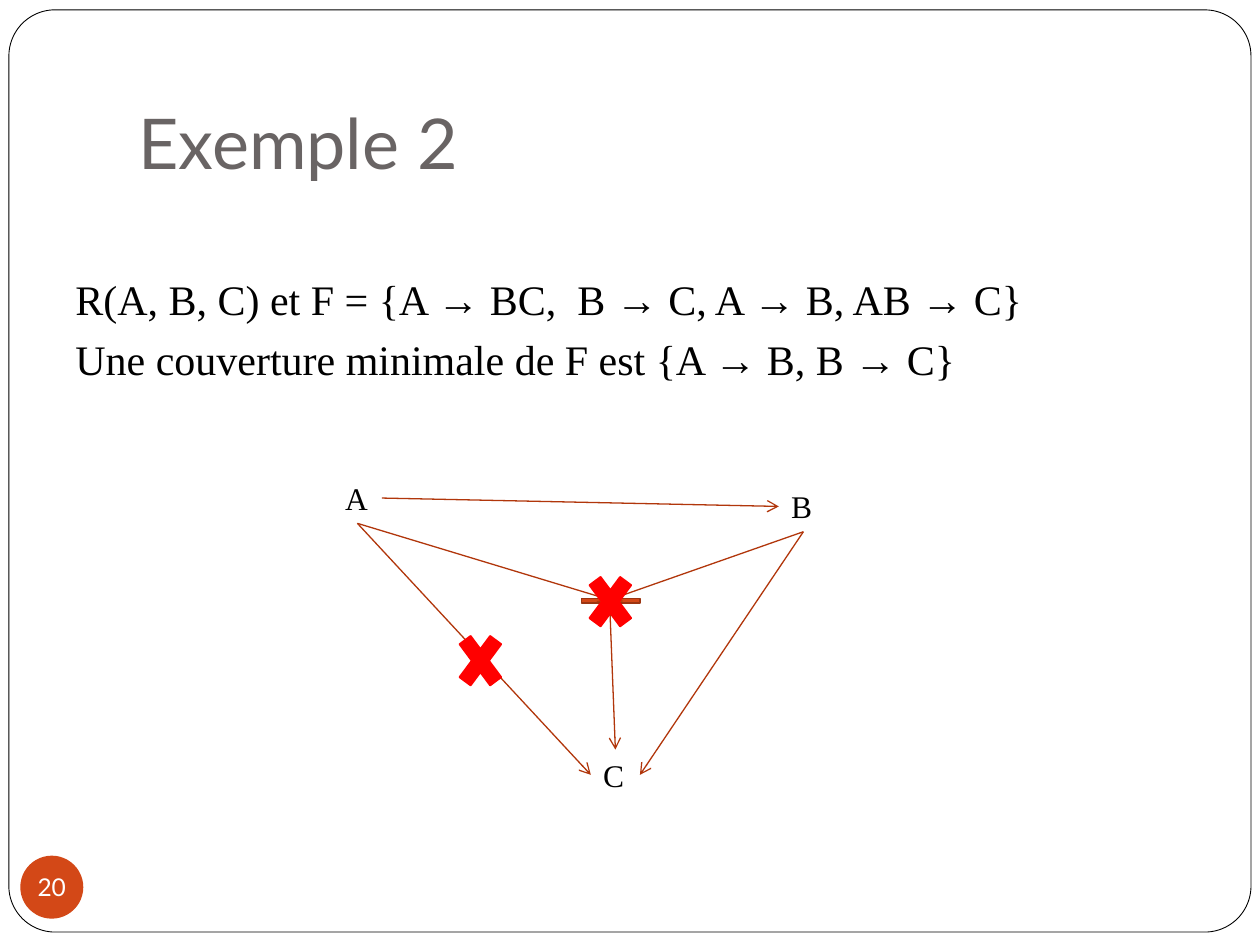
from lxml.etree import SubElement as Sub
from pptx import Presentation
from pptx.dml.color import RGBColor
from pptx.enum.shapes import MSO_CONNECTOR as Link, MSO_SHAPE as Kind
from pptx.enum.text import MSO_ANCHOR as Anchor, MSO_AUTO_SIZE as Fit, PP_ALIGN as Align
from pptx.oxml.ns import qn
from pptx.util import Cm, Pt

# Content
TITLE = "Exemple 2"
PAGE = "20"
LINES = [
    "R(A, B, C) et F = {A → BC,  B → C, A → B, AB → C}",
    "Une couverture minimale de F est {A → B, B → C}",
]
NODES = {"A": (6.71, 9.53), "B": (15.7, 9.7), "C": (11.91, 15.11)}
SIDE = (0.99, 1.02)
JOIN = (12.29, 12.09)  # where A and B meet
TOP, LEFT, BOTTOM, RIGHT = range(4)
# Each end is a node with its side, or a bare point
LINKS = [
    ((12.29, 12.17), ("C", TOP)),
    (("A", BOTTOM), JOIN),
    (("B", BOTTOM), JOIN),
    (("A", RIGHT), ("B", LEFT)),
    (("A", BOTTOM), ("C", LEFT)),
    (("B", BOTTOM), ("C", RIGHT)),
]
CROSSES = [(9.09, 12.52), (11.71, 11.33)]
HEX = {
    "white": "FFFFFF", "black": "000000", "grey": "696464", "orange": "D34817",
    "brown": "9C3511", "rust": "B1360B", "red": "FF0000",
}
SANS, SERIF = "Lato", "Times New Roman"


def tint(name):
    return RGBColor.from_string(HEX[name])


def write(para, text, font, size, color):
    run = para.add_run()
    run.text = text
    run.font.name = font
    run.font.size = Pt(size)
    run.font.color.rgb = tint(color)


def shape(kind, box, fill, line=None, width=1):
    item = slide.shapes.add_shape(kind, *map(Cm, box))
    item.shadow.inherit = False
    item.fill.solid()
    item.fill.fore_color.rgb = tint(fill)
    if line:
        item.line.color.rgb = tint(line)
        item.line.width = Pt(width)
    else:
        item.line.fill.background()
    return item


def label(box):
    item = slide.shapes.add_textbox(*map(Cm, box))
    item.text_frame.word_wrap = True
    return item


def link(start, end):
    item = slide.shapes.add_connector(Link.STRAIGHT, *map(Cm, JOIN + JOIN))
    if start[0] in nodes:
        item.begin_connect(nodes[start[0]], start[1])
    else:
        item.begin_x, item.begin_y = map(Cm, start)
    if end[0] in nodes:
        item.end_connect(nodes[end[0]], end[1])
    else:
        item.end_x, item.end_y = map(Cm, end)
    item.line.color.rgb = tint("rust")
    item.line.width = Pt(0.75)
    Sub(item.line._get_or_add_ln(), qn("a:tailEnd"), type="arrow")
    Sub(item._element.spPr, qn("a:effectLst"))


deck = Presentation()
deck.slide_width, deck.slide_height = Cm(25.4), Cm(19.05)
slide = deck.slides.add_slide(deck.slide_layouts[5])

# Frame, moved behind the title
frame = shape(Kind.ROUNDED_RECTANGLE, (0.18, 0.2, 25.04, 18.59), "white", "black", 0.5)
frame.adjustments[0] = 0.05
slide.shapes._spTree.insert(2, frame._element)

# Title
title = slide.shapes.title
title.left, title.top, title.width, title.height = map(Cm, (2.54, 0.76, 21.59, 3.18))
body = title.text_frame
body.auto_size = Fit.NONE
body.vertical_anchor = Anchor.BOTTOM
body.margin_bottom = Cm(0.25)
body.paragraphs[0].alignment = Align.LEFT
write(body.paragraphs[0], TITLE, SANS, 40, "grey")

# Page number
badge = shape(Kind.OVAL, (0.41, 17.25, 1.27, 1.27), "orange").text_frame
badge.margin_left = badge.margin_right = badge.margin_top = badge.margin_bottom = 0
badge.word_wrap = False
badge.vertical_anchor = Anchor.MIDDLE
badge.paragraphs[0].alignment = Align.CENTER
write(badge.paragraphs[0], PAGE, SANS, 14, "white")

# Statement
body = label((1.27, 5.38, 22.86, 3.15)).text_frame
for i, text in enumerate(LINES):
    para = body.add_paragraph() if i else body.paragraphs[0]
    para.space_before = Pt(5.8)
    prop = para._p.get_or_add_pPr()
    prop.set("marL", str(Cm(0.76)))
    prop.set("indent", str(-Cm(0.76)))
    write(para, text, SERIF, 24, "black")

# Graph nodes
nodes = {}
for name, spot in NODES.items():
    nodes[name] = label(spot + SIDE)
    write(nodes[name].text_frame.paragraphs[0], name, SERIF, 18, "black")

# Bar at the junction, arrows, and crosses on the redundant ones
shape(Kind.MATH_MINUS, (11.51, 11.91, 1.6, 0.41), "orange", "brown")
for start, end in LINKS:
    link(start, end)
for spot in CROSSES:
    shape(Kind.MATH_MULTIPLY, spot + (1.19, 1.6), "red", "red")

deck.save("out.pptx")
